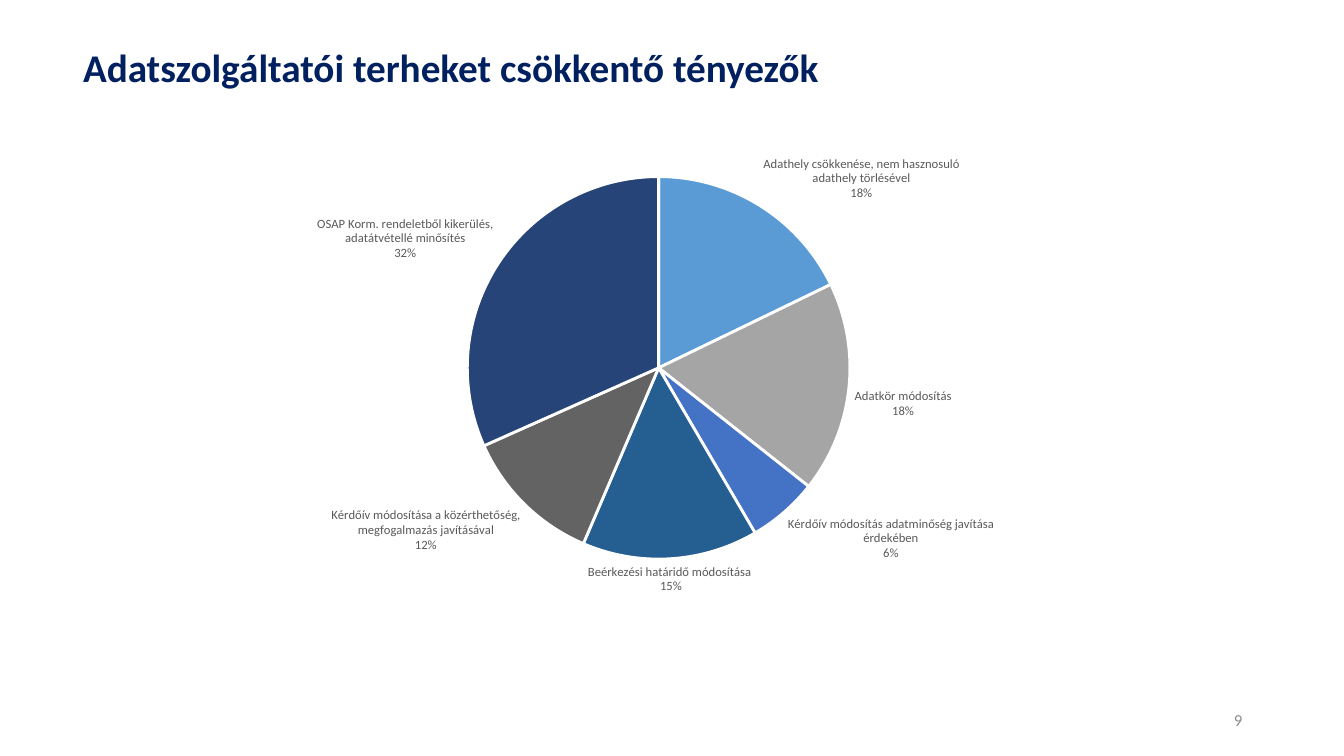
import pptx
import pptx.util
import pptx.chart.data
import pptx.dml.color
import pptx.enum.chart
import pptx.enum.text
from lxml import etree

Inches = pptx.util.Inches
Pt = pptx.util.Pt
RGBColor = pptx.dml.color.RGBColor
Align = pptx.enum.text.PP_ALIGN

NAVY = RGBColor(0x00, 0x20, 0x60)
GREY = RGBColor(0x8C, 0x8C, 0x8C)
DARK = RGBColor(0x59, 0x59, 0x59)
BLACK = RGBColor(0, 0, 0)
WHITE = RGBColor(0xFF, 0xFF, 0xFF)

FACTORS = [
    ("Adathely csökkenése, nem hasznosuló adathely törlésével", 18, RGBColor(0x5B, 0x9B, 0xD5)),
    ("Adatkör módosítás", 18, RGBColor(0xA5, 0xA5, 0xA5)),
    ("Kérdőív módosítás adatminőség javítása érdekében", 6, RGBColor(0x44, 0x72, 0xC4)),
    ("Beérkezési határidő módosítása ", 15, RGBColor(0x25, 0x5E, 0x91)),
    ("Kérdőív módosítása a közérthetőség, megfogalmazás javításával", 12,
     RGBColor(0x63, 0x63, 0x63)),
    ("OSAP Korm. rendeletből kikerülés, adatátvétellé minősítés", 32,
     RGBColor(0x26, 0x44, 0x78)),
]


class Page:
    def __init__(self, slide, face):
        self.slide = slide
        self.face = face

    def style(self, font, size, color, bold=False):
        font.name = self.face
        font.size = Pt(size)
        font.color.rgb = color
        font.bold = bold

    def text(self, box, words, size, color, align, bold=False):
        frame = self.slide.shapes.add_textbox(*map(Inches, box)).text_frame
        frame.word_wrap = True
        frame.vertical_anchor = pptx.enum.text.MSO_ANCHOR.MIDDLE
        para = frame.paragraphs[0]
        para.alignment = align
        para.line_spacing = 0.9
        run = para.add_run()
        run.text = words
        self.style(run.font, size, color, bold)

    def pie(self, box, parts, area):
        """Draw a pie; area is the plot's x, y, w, h as shares of the box."""
        data = pptx.chart.data.CategoryChartData()
        data.categories = [name for name, _, _ in parts]
        data.add_series("Series 1", [value for _, value, _ in parts])
        kind = pptx.enum.chart.XL_CHART_TYPE.PIE
        chart = self.slide.shapes.add_chart(kind, *map(Inches, box), data).chart
        chart.has_legend = False
        chart.has_title = False
        self.style(chart.font, 10, BLACK)

        plot = chart.plots[0]
        plot.vary_by_categories = True
        for index, (_, _, color) in enumerate(parts):
            look = plot.series[0].points[index].format
            look.fill.solid()
            look.fill.fore_color.rgb = color
            look.line.color.rgb = WHITE
            look.line.width = Pt(2)

        plot.has_data_labels = True
        labels = plot.data_labels
        labels.show_value = False
        labels.show_percentage = True
        labels.show_category_name = True
        labels.position = pptx.enum.chart.XL_LABEL_POSITION.OUTSIDE_END
        self.style(labels.font, 9, DARK)
        self.place(chart, area)

    def place(self, chart, area):
        """Fix the inner plot area by a manual layout."""
        space = chart.plots[0]._element.getparent()
        uri = etree.QName(space).namespace
        for old in space.findall(f"{{{uri}}}layout"):
            space.remove(old)
        layout = etree.Element(f"{{{uri}}}layout")
        manual = etree.SubElement(layout, f"{{{uri}}}manualLayout")
        pairs = [("layoutTarget", "inner"), ("xMode", "edge"), ("yMode", "edge")]
        for tag, value in pairs + list(zip("xywh", area)):
            etree.SubElement(manual, f"{{{uri}}}{tag}").set("val", str(value))
        space.insert(0, layout)


def main():
    deck = pptx.Presentation()
    deck.slide_width = Inches(13.33)
    deck.slide_height = Inches(7.5)
    page = Page(deck.slides.add_slide(deck.slide_layouts[6]), "Calibri")
    page.text((0.08, 0.25, 8.78, 0.89), "Adatszolgáltatói terheket csökkentő tényezők",
              28, NAVY, Align.CENTER, True)
    page.pie((0.84, 1.27, 11.5, 4.76), FACTORS, (0.33, 0.1, 0.33, 0.8))
    page.text((9.42, 6.95, 3, 0.4), "9", 12, GREY, Align.RIGHT)
    deck.save("out.pptx")


if __name__ == "__main__":
    main()
